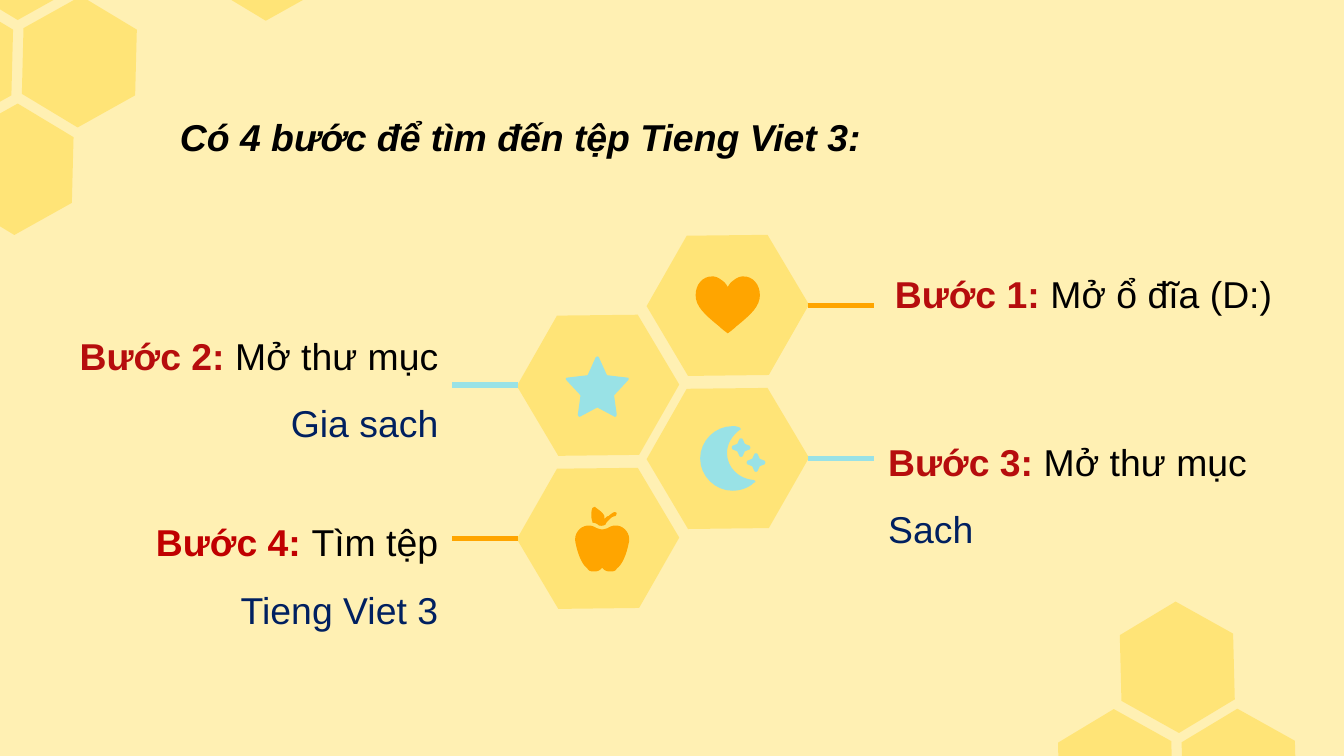
from dataclasses import dataclass

from lxml import etree
from pptx import Presentation
from pptx.dml.color import RGBColor
from pptx.enum.shapes import MSO_CONNECTOR
from pptx.enum.text import MSO_AUTO_SIZE, PP_ALIGN
from pptx.oxml.ns import qn
from pptx.util import Pt

STRAIGHT = MSO_CONNECTOR.STRAIGHT
GROW = MSO_AUTO_SIZE.SHAPE_TO_FIT_TEXT
LEFT, RIGHT = PP_ALIGN.LEFT, PP_ALIGN.RIGHT
CURVE_STEPS = 8


@dataclass(frozen=True)
class Theme:
    background: str = "FFF0B3"
    honey: str = "FFDB45"
    honey_alpha: int = 54
    orange: str = "FFA500"
    aqua: str = "99E2E6"
    black: str = "000000"
    red: str = "B60D0D"
    bright_red: str = "C00000"
    navy: str = "002060"
    font: str = "Arial"
    text_size: int = 20
    line_width: int = 3


def trace(start, *segments):
    """Turn segments of 2 numbers (line) or 6 (Bezier curve) into points."""
    points = [start]
    for segment in segments:
        if len(segment) == 2:
            points.append(segment)
            continue
        (x0, y0), (x1, y1, x2, y2, x3, y3) = points[-1], segment
        for step in range(1, CURVE_STEPS + 1):
            t = step / CURVE_STEPS
            a, b, c, d = (1 - t) ** 3, 3 * t * (1 - t) ** 2, 3 * t * t * (1 - t), t ** 3
            points.append((a * x0 + b * x1 + c * x2 + d * x3,
                           a * y0 + b * y1 + c * y2 + d * y3))
    return points


def flip(points):
    return [(-x, y) for x, y in points]


def mirrored(right_half):
    """Close a right half, drawn from top to bottom, with its mirror image."""
    return right_half + flip(right_half[-2:0:-1])


def turned(half):
    """Complete half of the corners with the same corners turned by 180 degrees."""
    return half + [(-x, -y) for x, y in half]


CORNER_HEXAGON = turned([(0.9, -35.2), (30.8, -17.2), (29.9, 18)])
STEP_HEXAGON = turned([(43.5, -0.4), (22, 37.3), (-21.3, 37.8)])
HEART = mirrored(trace(
    (0, -9.7), (0.7, -11.2, 1.8, -12.6, 3.3, -13.5), (4.8, -14.8, 6.5, -15.5, 8.3, -15.5),
    (13.5, -15.5, 17.2, -11.2, 17.2, -5.4), (17.2, 0.4, 12.7, 4.7, 4.7, 11.2),
    (3.2, 12.6, 1.8, 13.7, 0, 15)))
STAR = mirrored(trace(
    (0, -15.5), (0.8, -15.1), (5.2, -5.4), (16.2, -4.1), (17, -4, 17, -3.2, 16.4, -2.6),
    (9, 5.4), (10.4, 15.5), (10.4, 16.2, 10.1, 16.9, 9.4, 16.9), (0, 11.9)))
SPARKLE = mirrored([(0, -5), (0.8, -4.7), (2, -2), (4.7, -0.9), (5, 0),
                    (4.7, 0.9), (2, 2), (0.8, 4.7), (0, 5)])
MOON = trace(
    (2.5, -17.3), (-6.8, -17.3, -14.8, -9.4, -14.8, 0), (-14.8, 9.4, -6.8, 17.3, 2.5, 17.3),
    (6.8, 17.3, 11.2, 15.8, 14, 13), (14.8, 13, 14.8, 12.2, 14.8, 12.2),
    (14, 11.5, 14, 11.5, 13.3, 11.5), (6.1, 10.8, -0.4, 5, -0.4, -2.9),
    (-0.4, -7.9, 2.5, -12.2, 6.1, -15.1), (7.6, -15.1, 6.8, -16.6, 6.1, -16.6),
    (4.7, -17.3, 4, -17.3, 2.5, -17.3))
APPLE = mirrored(trace(
    (0, -4.7), (0.6, -4.7, 1.2, -4.9, 2.9, -5.4), (4, -6.1, 5.4, -6.8, 6.9, -6.8), (8.1, -6.8),
    (12.2, -6.1, 15, -2.5, 14.4, 1.8), (13, 9, 10.8, 14, 7.9, 16.2),
    (7.2, 17.6, 5.8, 17.8, 4.3, 17.8), (2.5, 17.8, 1.2, 17.3, 0, 15.8)))
LEAF = trace(
    (-3.7, -16.9), (-4.5, -16.9, -4.5, -16.5, -5.2, -16.2),
    (-5.2, -16.2, -6.6, -12.6, -5.2, -9), (-5.2, -8.4),
    (-3.7, -8.3, -2.3, -7.6, -1.6, -6.8), (-0.9, -6.7, 1, -6.5, 2, -7.6),
    (2, -8.3, 3.5, -9.7, 4.2, -10.4), (4.9, -11.2, 6.3, -11.9, 7.1, -11.9),
    (7.8, -12.6, 7.8, -13.3, 7.8, -13.3), (7.8, -14, 7.1, -14, 6.4, -14),
    (6.3, -14, 4.9, -13.3, 3.5, -11.9), (2.7, -11.9, 2, -11.2, 1.3, -10.4),
    (1.3, -11.2, 1.3, -11.2, 1.3, -11.9), (-0.1, -14.8, -3.7, -16.2, -3.7, -16.9))


class SlideBuilder:
    """Draws elements on one slide in the given theme; lengths are in points."""

    def __init__(self, slide, theme):
        self.slide = slide
        self.theme = theme
        fill = slide.background.fill
        fill.solid()
        fill.fore_color.rgb = RGBColor.from_string(theme.background)

    def outline(self, points, center, color, alpha=None):
        corners = [(Pt(center[0] + x), Pt(center[1] + y)) for x, y in points]
        builder = self.slide.shapes.build_freeform(*corners[0])
        builder.add_line_segments(corners[1:], close=True)
        shape = builder.convert_to_shape()
        shape.shadow.inherit = False
        shape.fill.solid()
        shape.fill.fore_color.rgb = RGBColor.from_string(color)
        shape.line.fill.background()
        if alpha is not None:
            tint = shape.element.spPr.find(".//" + qn("a:srgbClr"))
            etree.SubElement(tint, qn("a:alpha"), val=str(alpha * 1000))

    def hexagon(self, points, center):
        self.outline(points, center, self.theme.honey, self.theme.honey_alpha)

    def line(self, start_x, end_x, y, color):
        line = self.slide.shapes.add_connector(STRAIGHT, Pt(start_x), Pt(y), Pt(end_x), Pt(y))
        line.line.color.rgb = RGBColor.from_string(color)
        line.line.width = Pt(self.theme.line_width)
        etree.SubElement(line.element.spPr, qn("a:effectLst"))

    def text(self, bounds, spans, align=LEFT, wrap=True, spacing=None, italic=False):
        """Write one paragraph; spans are (text, color, bold)."""
        box = self.slide.shapes.add_textbox(*map(Pt, bounds))
        frame = box.text_frame
        frame.word_wrap = wrap
        frame.auto_size = GROW
        para = frame.paragraphs[0]
        para.alignment = align
        para.line_spacing = spacing
        para.font.name = self.theme.font
        para.font.size = Pt(self.theme.text_size)
        para.font.italic = italic
        for text, color, bold in spans:
            span = para.add_run()
            span.text = text
            span.font.bold = bold
            span.font.color.rgb = RGBColor.from_string(color)


def main():
    theme = Theme()
    deck = Presentation()
    deck.slide_width, deck.slide_height = Pt(720), Pt(405)
    page = SlideBuilder(deck.slides.add_slide(deck.slide_layouts[6]), theme)

    for center in [(663.8, 414.9), (630.7, 357.5), (597.6, 415.1)]:
        page.hexagon(flip(CORNER_HEXAGON), center)
    for center in [(143.3, -24.1), (10.4, -24.5), (42.5, 33.1), (8.6, 90.7), (-23.8, 33.1)]:
        page.hexagon(CORNER_HEXAGON, center)

    left_x, right_x = 320.4, 389.9
    reach, line_length = 42.8, 35.6
    steps = [  # center, side of the line (1 = right), color, icon parts with their offsets
        ((right_x, 163.6), 1, theme.orange, [(HEART, 0, 0)]),
        ((left_x, 206.4), -1, theme.aqua, [(STAR, -0.4, 0)]),
        ((left_x, 288.4), -1, theme.orange, [(APPLE, 2.2, 0), (LEAF, 2.2, 0)]),
        ((right_x, 245.6), 1, theme.aqua,
         [(SPARKLE, 7.1, -5.8), (SPARKLE, 15.1, 2.2), (MOON, 0, 0)]),
    ]
    for (x, y), side, color, icon in steps:
        page.hexagon(STEP_HEXAGON, (x, y))
        for points, shift_x, shift_y in icon:
            page.outline(points, (x + shift_x, y + shift_y), color)
        page.line(x + side * reach, x + side * (reach + line_length), y, color)

    page.text((89.3, 57.6, 383, 31.5),
              [("Có 4 bước để tìm đến tệp Tieng Viet 3:", theme.black, True)],
              wrap=False, italic=True)
    page.text((472.3, 141.8, 218.2, 31.5),
              [("Bước 1: ", theme.red, True), ("Mở ổ đĩa (D:)", theme.black, False)], wrap=False)
    labels = [
        ((23.8, 162.7, 218.2, 75.6), RIGHT, theme.red, "Bước 2: ", "Mở thư mục ", "Gia sach"),
        ((468.7, 219.6, 210.2, 75.6), LEFT, theme.red, "Bước 3: ", "Mở thư mục ", "Sach"),
        ((64.1, 262.8, 177.8, 75.6), RIGHT, theme.bright_red,
         "Bước 4: ", "Tìm tệp ", "Tieng Viet 3"),
    ]
    for bounds, align, color, step, action, target in labels:
        spans = [(step, color, True), (action, theme.black, False), (target, theme.navy, False)]
        page.text(bounds, spans, align, spacing=1.5)

    deck.save("out.pptx")


if __name__ == "__main__":
    main()
